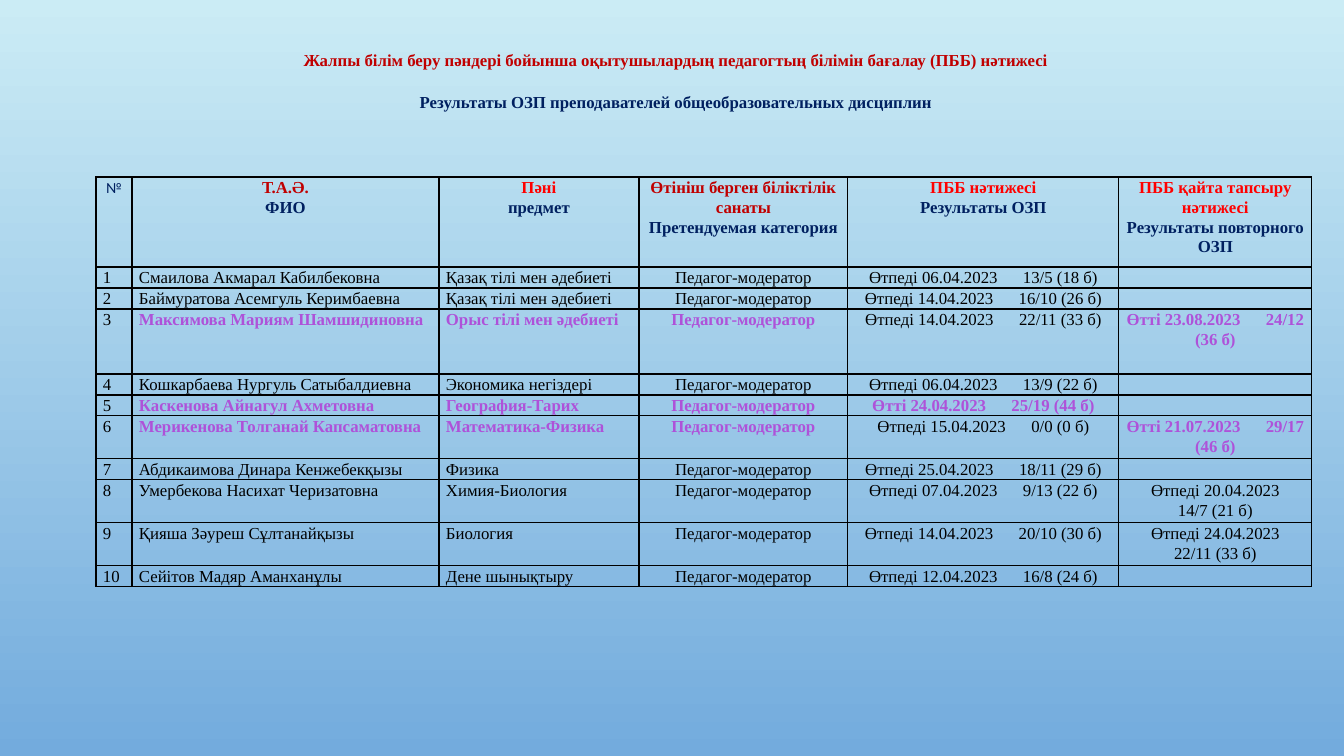
from lxml.etree import SubElement
from pptx import Presentation
from pptx.dml.color import RGBColor
from pptx.enum.text import MSO_ANCHOR, MSO_AUTO_SIZE, PP_ALIGN
from pptx.oxml.ns import qn
from pptx.util import Emu, Pt

SERIF, SANS = "Times New Roman", "Calibri"
CRIMSON = RGBColor(0xC0, 0x00, 0x00)
RED = RGBColor(0xFF, 0x00, 0x00)
NAVY = RGBColor(0x00, 0x20, 0x60)
BLACK = RGBColor(0x00, 0x00, 0x00)
PURPLE = RGBColor(0xAE, 0x52, 0xD9)
SKY_TOP = RGBColor(0xCB, 0xEC, 0xF5)
SKY_BOTTOM = RGBColor(0x73, 0xAB, 0xDD)

COLUMNS = [36, 307, 200, 209, 271, 193]
HEADER_HEIGHT, LINE_HEIGHT, RETAKE_HEIGHT = 90, 21, 43
TALL_ROWS = {3: 65}
CATEGORY = "Педагог-модератор"
PASSED = "Өтті"

TITLE = [
    ("Жалпы білім беру пәндері бойынша оқытушылардың педагогтың білімін бағалау (ПББ) нәтижесі", CRIMSON),
    ("Результаты ОЗП преподавателей общеобразовательных дисциплин", NAVY),
]
HEADERS = [
    [("Т.А.Ә.", CRIMSON), ("ФИО", NAVY)],
    [("Пәні", RED), ("предмет", NAVY)],
    [("Өтініш берген біліктілік санаты", CRIMSON), ("Претендуемая категория", NAVY)],
    [("ПББ нәтижесі", RED), ("Результаты ОЗП", NAVY)],
    [("ПББ қайта тапсыру нәтижесі", RED), ("Результаты повторного ОЗП", NAVY)],
]
TEACHERS = [
    ("Смаилова Акмарал Кабилбековна", "Қазақ тілі мен әдебиеті", ("Өтпеді 06.04.2023", "13/5 (18 б)"), ()),
    ("Баймуратова Асемгуль Керимбаевна", "Қазақ тілі мен әдебиеті", ("Өтпеді 14.04.2023", "16/10 (26 б)"), ()),
    ("Максимова Мариям Шамшидиновна", "Орыс тілі мен әдебиеті", ("Өтпеді 14.04.2023", "22/11 (33 б)"),
     ("Өтті 23.08.2023", "24/12 (36 б)")),
    ("Кошкарбаева Нургуль Сатыбалдиевна", "Экономика негіздері", ("Өтпеді 06.04.2023", "13/9 (22 б)"), ()),
    ("Каскенова Айнагул Ахметовна", "География-Тарих", ("Өтті 24.04.2023", "25/19 (44 б)"), ()),
    ("Мерикенова Толганай Капсаматовна", "Математика-Физика", ("Өтпеді 15.04.2023", "0/0 (0 б)"),
     ("Өтті 21.07.2023", "29/17 (46 б)")),
    ("Абдикаимова Динара Кенжебекқызы", "Физика", ("Өтпеді 25.04.2023", "18/11 (29 б)"), ()),
    ("Умербекова Насихат Черизатовна", "Химия-Биология", ("Өтпеді 07.04.2023", "9/13 (22 б)"),
     ("Өтпеді 20.04.2023", "14/7 (21 б)")),
    ("Қияша Зәуреш Сұлтанайқызы", "Биология", ("Өтпеді 14.04.2023", "20/10 (30 б)"),
     ("Өтпеді 24.04.2023", "22/11 (33 б)")),
    ("Сейітов Мадяр Аманханұлы", "Дене шынықтыру", ("Өтпеді 12.04.2023", "16/8 (24 б)"), ()),
]


def px(n):
    """Turn pixels into EMU."""
    return Emu(round(n * 914400 / 100.8))


def style(p, color=BLACK, bold=False, align=PP_ALIGN.LEFT, font=SERIF, size=12):
    """Format a whole paragraph."""
    p.alignment = align
    p.line_spacing = 1.07
    p.font.name, p.font.size = font, Pt(size)
    p.font.bold, p.font.color.rgb = bold, color


def write_lines(tf, lines):
    """Write bold centred lines, each in its own colour."""
    for i, (text, color) in enumerate(lines):
        p = tf.paragraphs[0] if i == 0 else tf.add_paragraph()
        p.text = text
        style(p, color, True, PP_ALIGN.CENTER)


def write_result(p, result, color, bold):
    """Write an exam date and score parted by one wide space."""
    style(p, color, bold, PP_ALIGN.CENTER)
    if not result:
        SubElement(p._p, qn("a:endParaRPr"), sz="1200")
        return
    date, score = result
    for text in (date, " ", score):
        r = p.add_run()
        r.text = text
        if text == " ":
            r._r.get_or_add_rPr().set("spc", "1500")


def format_cell(cell):
    """Give a cell thin black borders, no fill and narrow margins."""
    tcPr = cell._tc.get_or_add_tcPr()
    for side in ("lnL", "lnR", "lnT", "lnB"):
        ln = SubElement(tcPr, qn(f"a:{side}"), w=str(Pt(1)))
        fill = SubElement(ln, qn("a:solidFill"))
        SubElement(fill, qn("a:srgbClr"), val=str(BLACK))
    cell.fill.background()
    cell.margin_left = cell.margin_right = px(7)
    cell.margin_top = cell.margin_bottom = 0


def add_background(s):
    """Fill the slide from light at the top to darker at the bottom."""
    fill = s.background.fill
    fill.gradient()
    fill.gradient_angle = 270
    for stop, position, color in zip(fill.gradient_stops, (0, 1), (SKY_TOP, SKY_BOTTOM)):
        stop.position, stop.color.rgb = position, color


def add_title(s, x, y, w, h):
    """Place the two-language title."""
    sp = s.shapes.title
    sp.left, sp.top, sp.width, sp.height = px(x), px(y), px(w), px(h)
    tf = sp.text_frame
    tf.word_wrap, tf.auto_size = True, MSO_AUTO_SIZE.NONE
    tf.vertical_anchor = MSO_ANCHOR.TOP
    write_lines(tf, TITLE)
    tf.paragraphs[1].space_before = Pt(15)


def fill_teacher(row, number, teacher):
    """Write one teacher, in purple where the exam is passed."""
    name, subject, *results = teacher
    passed = [bool(result) and result[0].startswith(PASSED) for result in results]
    marks = [False] + [any(passed)] * 3
    aligns = [PP_ALIGN.LEFT] * 3 + [PP_ALIGN.CENTER]
    texts = (str(number), name, subject, CATEGORY)
    for cell, text, mark, align in zip(row.cells, texts, marks, aligns):
        p = cell.text_frame.paragraphs[0]
        p.text = text
        style(p, PURPLE if mark else BLACK, mark, align)
    for col, (result, mark) in enumerate(zip(results, passed), len(texts)):
        p = row.cells[col].text_frame.paragraphs[0]
        write_result(p, result, PURPLE if mark else BLACK, mark)


def add_results(s, x, y):
    """Build the table of exam results."""
    heights = [HEADER_HEIGHT] + [
        TALL_ROWS.get(n, RETAKE_HEIGHT if teacher[-1] else LINE_HEIGHT)
        for n, teacher in enumerate(TEACHERS, 1)]
    table = s.shapes.add_table(len(heights), len(COLUMNS), px(x), px(y),
                               px(sum(COLUMNS)), px(sum(heights))).table
    table.horz_banding = False
    for column, width in zip(table.columns, COLUMNS):
        column.width = px(width)
    for row, height in zip(table.rows, heights):
        row.height = px(height)
    for cell in table.iter_cells():
        format_cell(cell)
    p = table.cell(0, 0).text_frame.paragraphs[0]
    p.text = "№"
    style(p, NAVY, align=PP_ALIGN.CENTER, font=SANS, size=11)
    for col, lines in enumerate(HEADERS, 1):
        write_lines(table.cell(0, col).text_frame, lines)
    for n, teacher in enumerate(TEACHERS, 1):
        fill_teacher(table.rows[n], n, teacher)


def main():
    """Build the slide and save it."""
    prs = Presentation()
    prs.slide_width, prs.slide_height = px(1344), px(756)
    s = prs.slides.add_slide(prs.slide_layouts[5])
    add_background(s)
    add_title(s, 169, 43, 1014, 76)
    add_results(s, 96, 177)
    prs.save("out.pptx")


if __name__ == "__main__":
    main()
